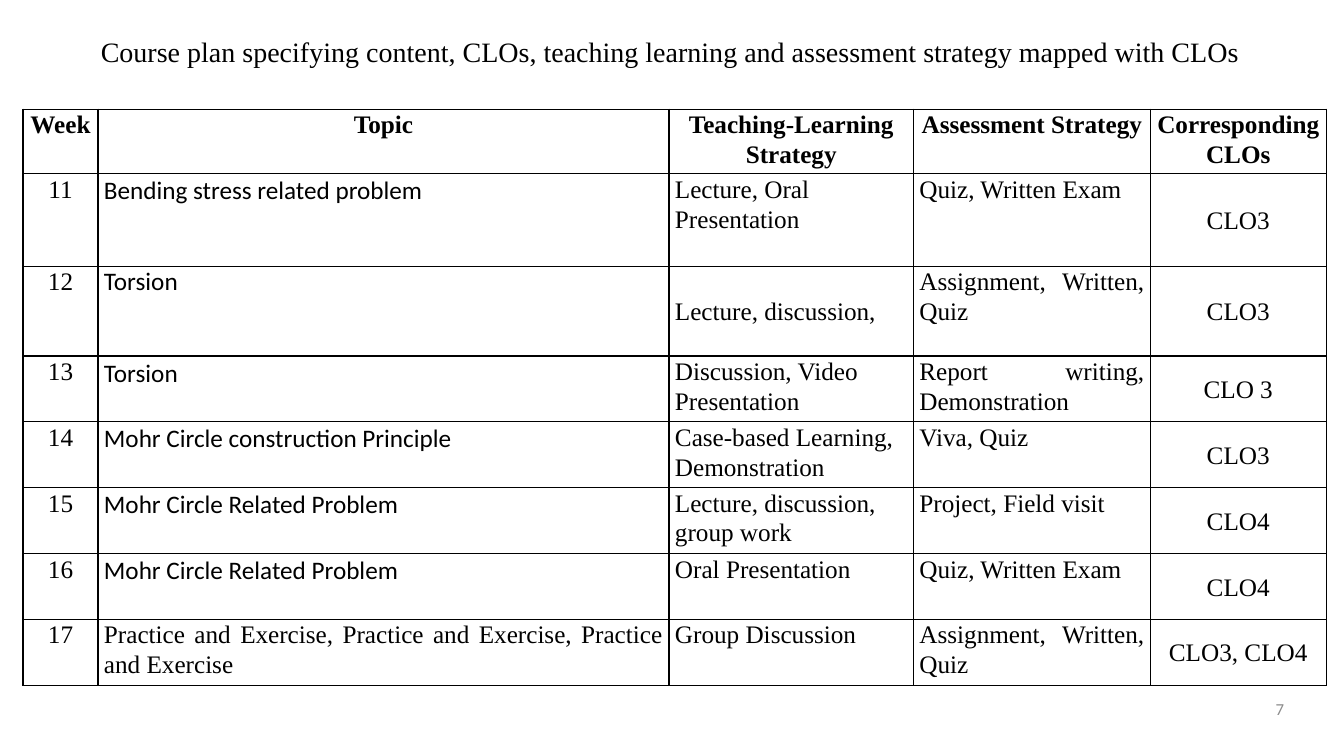
"""Build the weekly course plan slide."""
import lxml.etree
import pptx
import pptx.dml.color
import pptx.enum.text
import pptx.oxml.ns
import pptx.util

Cm = pptx.util.Cm
Pt = pptx.util.Pt
ALIGN = pptx.enum.text.PP_ALIGN
ANCHOR = pptx.enum.text.MSO_ANCHOR
BLACK = pptx.dml.color.RGBColor(0x00, 0x00, 0x00)
WHITE = pptx.dml.color.RGBColor(0xFF, 0xFF, 0xFF)
GREY = pptx.dml.color.RGBColor(0x8C, 0x8C, 0x8C)
SERIF = "Times New Roman"
SANS = "Calibri"

TITLE = ("Course plan specifying content, CLOs, teaching learning "
         "and assessment strategy mapped with CLOs")
COLUMN_WIDTHS = [1.89, 14.39, 6.16, 5.97, 4.43]
ROW_HEIGHTS = [1.63, 2.33, 2.26] + [1.66] * 5
PLAN = [
    ["Week", "Topic", "Teaching-Learning Strategy", "Assessment Strategy", "Corresponding CLOs"],
    ["11", "Bending stress related problem", "Lecture, Oral Presentation",
     "Quiz, Written Exam", "CLO3"],
    ["12", "Torsion", "Lecture, discussion,", "Assignment, Written, Quiz", "CLO3"],
    ["13", "Torsion", "Discussion, Video Presentation",
     "Report writing, Demonstration", "CLO 3"],
    ["14", "Mohr Circle construction Principle", "Case-based Learning, Demonstration",
     "Viva, Quiz", "CLO3"],
    ["15", "Mohr Circle Related Problem", "Lecture, discussion, group work",
     "Project, Field visit", "CLO4"],
    ["16", "Mohr Circle Related Problem", "Oral Presentation", "Quiz, Written Exam", "CLO4"],
    ["17", "Practice and Exercise, Practice and Exercise, Practice and Exercise",
     "Group Discussion", "Assignment, Written, Quiz", "CLO3, CLO4"],
]
HEADER_FORMAT = {"align": ALIGN.CENTER, "bold": True}
COLUMN_FORMATS = [
    {"align": ALIGN.CENTER},
    {"align": ALIGN.JUSTIFY, "font": SANS},
    {"align": ALIGN.LEFT},
    {"align": ALIGN.JUSTIFY},
    {"align": ALIGN.CENTER, "anchor": ANCHOR.MIDDLE},
]
CELL_FORMATS = {
    (2, 1): {"align": ALIGN.LEFT, "spacing": 1.0},
    (2, 2): {"anchor": ANCHOR.MIDDLE},
    (7, 1): {"font": SERIF},
}


def write_text(frame, text, *, size=18, font=SERIF, color=BLACK, bold=False,
               align=ALIGN.LEFT, spacing=1.0):
    """Write one formatted paragraph into a text frame."""
    para = frame.paragraphs[0]
    para.alignment = align
    para.line_spacing = spacing
    span = para.add_run()
    span.text = text
    span.font.size = Pt(size)
    span.font.name = font
    span.font.bold = bold
    span.font.color.rgb = color


def add_text_box(page, text, left, top, width, height, *, wrap=True, **text_format):
    """Add a text box with vertically centred text."""
    box = page.shapes.add_textbox(Cm(left), Cm(top), Cm(width), Cm(height))
    box.text_frame.word_wrap = wrap
    box.text_frame.vertical_anchor = ANCHOR.MIDDLE
    write_text(box.text_frame, text, **text_format)


def add_borders(cell):
    """Draw a thin line on every side of a cell."""
    properties = cell._tc.get_or_add_tcPr()
    qn = pptx.oxml.ns.qn
    for position, side in enumerate(["a:lnL", "a:lnR", "a:lnT", "a:lnB"]):
        line = lxml.etree.Element(qn(side), w=str(Pt(1)))
        fill = lxml.etree.SubElement(line, qn("a:solidFill"))
        lxml.etree.SubElement(fill, qn("a:srgbClr"), val=str(BLACK))
        properties.insert(position, line)


def fill_cell(cell, text, *, anchor=ANCHOR.TOP, spacing=1.07, **text_format):
    """Format a table cell and write its text."""
    cell.margin_left = cell.margin_right = Cm(0.15)
    cell.margin_top = cell.margin_bottom = Cm(0)
    cell.vertical_anchor = anchor
    cell.fill.solid()
    cell.fill.fore_color.rgb = WHITE
    add_borders(cell)
    write_text(cell.text_frame, text, spacing=spacing, **text_format)


def add_plan_table(page, left, top):
    """Add the course plan table."""
    table = page.shapes.add_table(
        len(PLAN), len(COLUMN_WIDTHS), Cm(left), Cm(top),
        Cm(sum(COLUMN_WIDTHS)), Cm(sum(ROW_HEIGHTS))).table
    for column, width in zip(table.columns, COLUMN_WIDTHS):
        column.width = Cm(width)
    for row, height in zip(table.rows, ROW_HEIGHTS):
        row.height = Cm(height)
    for row_index, texts in enumerate(PLAN):
        for column_index, text in enumerate(texts):
            cell_format = HEADER_FORMAT if row_index == 0 else {
                **COLUMN_FORMATS[column_index],
                **CELL_FORMATS.get((row_index, column_index), {})}
            fill_cell(table.cell(row_index, column_index), text, **cell_format)


def main():
    """Build and save the deck."""
    deck = pptx.Presentation()
    deck.slide_width = Cm(33.87)
    deck.slide_height = Cm(19.05)
    page = deck.slides.add_slide(deck.slide_layouts[6])
    add_plan_table(page, 0.58, 2.75)
    add_text_box(page, TITLE, 2.29, 0.74, 29.41, 1.12,
                 wrap=False, size=20, align=ALIGN.JUSTIFY)
    add_text_box(page, "7", 30.76, 17.15, 1.85, 1.4,
                 size=12, font=SANS, color=GREY, align=ALIGN.RIGHT)
    deck.save("out.pptx")


if __name__ == "__main__":
    main()
